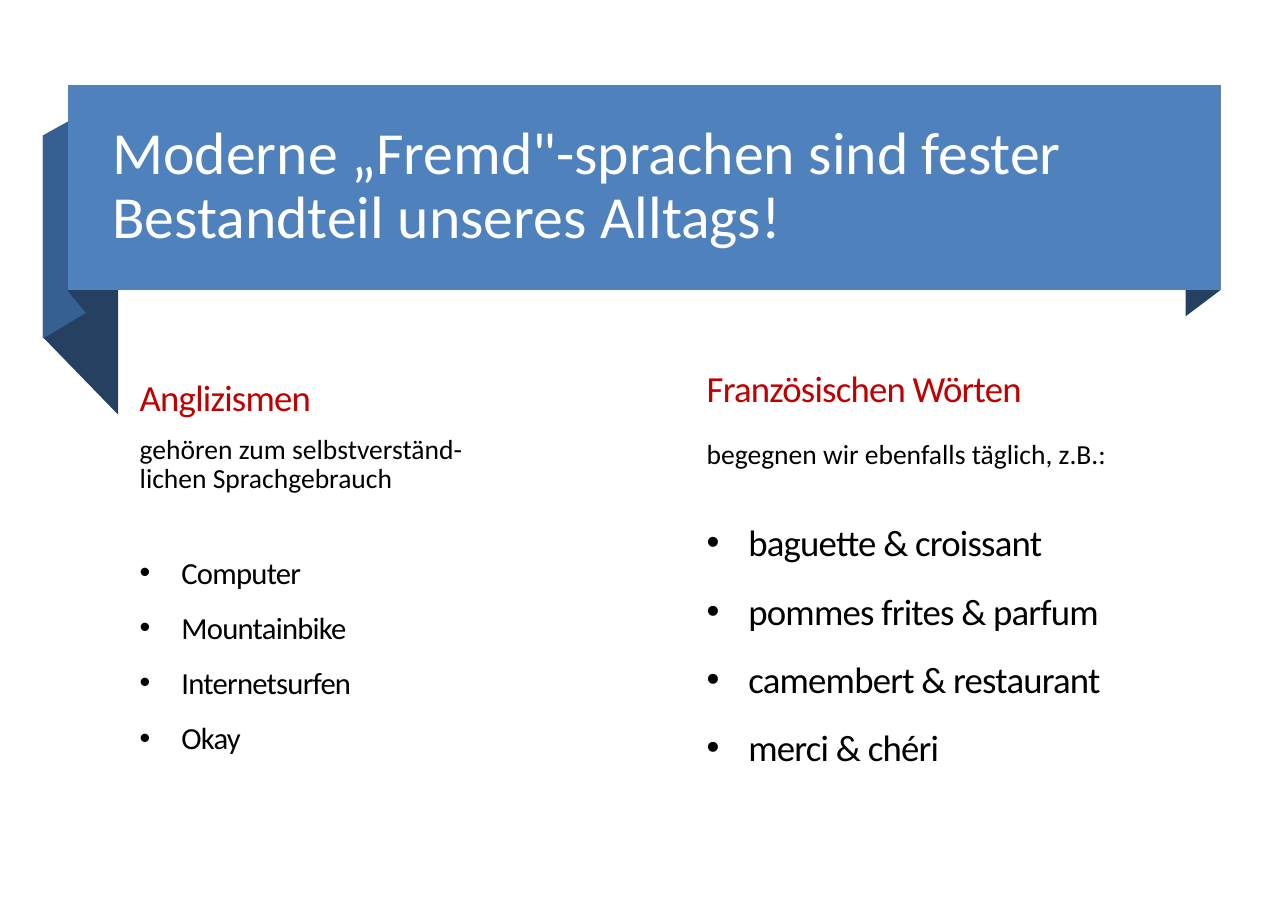
from lxml.etree import SubElement
from pptx import Presentation
from pptx.dml.color import RGBColor
from pptx.enum.shapes import MSO_SHAPE
from pptx.enum.text import MSO_ANCHOR
from pptx.oxml.ns import qn
from pptx.util import Cm, Pt

WHITE, BLACK, RED = "FFFFFF", "000000", "C00000"
BLUE, MID, DARK = "4F81BD", "376092", "254061"


def color(code):
    return RGBColor.from_string(code)


def line(text, size=18, tint=BLACK, lead=0.9, before=0, after=0,
         track=0, left=0, hang=0, bullet=False):
    """Describe one paragraph and its format."""
    return dict(text=text, size=size, tint=tint, lead=lead, before=before,
                after=after, track=track, left=left, hang=hang, bullet=bullet)


class Deck:
    def __init__(self, wide, high, font="Calibri"):
        self.font = font
        self.pres = Presentation()
        self.pres.slide_width, self.pres.slide_height = Cm(wide), Cm(high)
        self.slide = self.pres.slides.add_slide(self.pres.slide_layouts[6])

    def paint(self, shape, fill):
        shape.shadow.inherit = False
        shape.fill.solid()
        shape.fill.fore_color.rgb = color(fill)
        shape.line.fill.background()

    def fold(self, fill, *points):
        spots = [(Cm(x), Cm(y)) for x, y in points]
        form = self.slide.shapes.build_freeform(*spots[0], scale=1.0)
        form.add_line_segments(spots[1:], close=True)
        self.paint(form.convert_to_shape(), fill)

    def rect(self, fill, *area):
        shape = self.slide.shapes.add_shape(
            MSO_SHAPE.RECTANGLE, *[Cm(v) for v in area])
        self.paint(shape, fill)

    def text(self, area, lines, anchor=MSO_ANCHOR.MIDDLE, inset=True):
        box = self.slide.shapes.add_textbox(*[Cm(v) for v in area])
        frame = box.text_frame
        frame.word_wrap = True
        frame.vertical_anchor = anchor
        if not inset:
            frame.margin_left = frame.margin_right = 0
            frame.margin_top = frame.margin_bottom = 0
        for i, item in enumerate(lines):
            para = frame.add_paragraph() if i else frame.paragraphs[0]
            self.style(para, **item)

    def style(self, para, text, size, tint, lead, before, after,
              track, left, hang, bullet):
        para.line_spacing = lead
        para.space_before, para.space_after = Pt(before), Pt(after)
        props = para._p.get_or_add_pPr()
        props.set("marL", str(Cm(left)))
        props.set("indent", str(Cm(-hang)))
        if bullet:
            SubElement(props, qn("a:buFont"), typeface="Arial")
            SubElement(props, qn("a:buChar"), char="•")
        run = para.add_run()
        run.text = text
        run.font.name, run.font.size = self.font, Pt(size)
        run.font.color.rgb = color(tint)
        if track:
            run._r.get_or_add_rPr().set("spc", str(int(track * 100)))


def main():
    deck = Deck(29.67, 21.01)

    # Ribbon folds behind the banner
    deck.fold(DARK, (2.72, 9.55), (0.99, 7.77), (0.99, 3.12), (2.72, 4.9))
    deck.fold(MID, (1.98, 7.21), (0.99, 7.8), (0.99, 3.12), (1.98, 2.57))
    deck.fold(DARK, (1.98, 7.21), (1.57, 6.71), (1.57, 1.96), (1.98, 2.49))
    deck.fold(DARK, (28.12, 6.68), (27.31, 7.29), (27.31, 2.57), (28.12, 1.96))

    # Banner with title
    deck.rect(BLUE, 1.57, 1.96, 26.54, 4.72)
    deck.text((2.34, 2.46, 24.97, 3.71), [
        line('Moderne „Fremd"-sprachen sind fester Bestandteil unseres Alltags!',
             size=39, tint=WHITE, after=6)])

    # English words
    words = ["Computer", "Mountainbike", "Internetsurfen", "Okay"]
    deck.text((2.97, 7.62, 23.62, 10.92), [
        line("Anglizismen", size=24, tint=RED, after=10.5, track=-0.5),
        line("gehören zum selbstverständ-"),
        line("lichen Sprachgebrauch", after=26.4),
        *[line(word, size=20, lead=1.5, track=-0.5, left=0.96, hang=0.96,
               bullet=True) for word in words]])

    # French words
    words = ["baguette & croissant", "pommes frites & parfum",
             "camembert & restaurant", "merci & chéri"]
    deck.text((16.18, 8.43, 10.95, 9.5), [
        line("Französischen Wörten", size=24, tint=RED, lead=1.0, after=10.5,
             track=-0.5, left=0.1),
        line("begegnen wir ebenfalls täglich, z.B.:", lead=Pt(28.8),
             after=16.8, left=0.1),
        *[line(word, size=24, lead=Pt(44.6), track=-0.5, left=1.06, hang=0.96,
               bullet=True) for word in words]],
        anchor=MSO_ANCHOR.TOP, inset=False)

    deck.pres.save("out.pptx")


if __name__ == "__main__":
    main()
